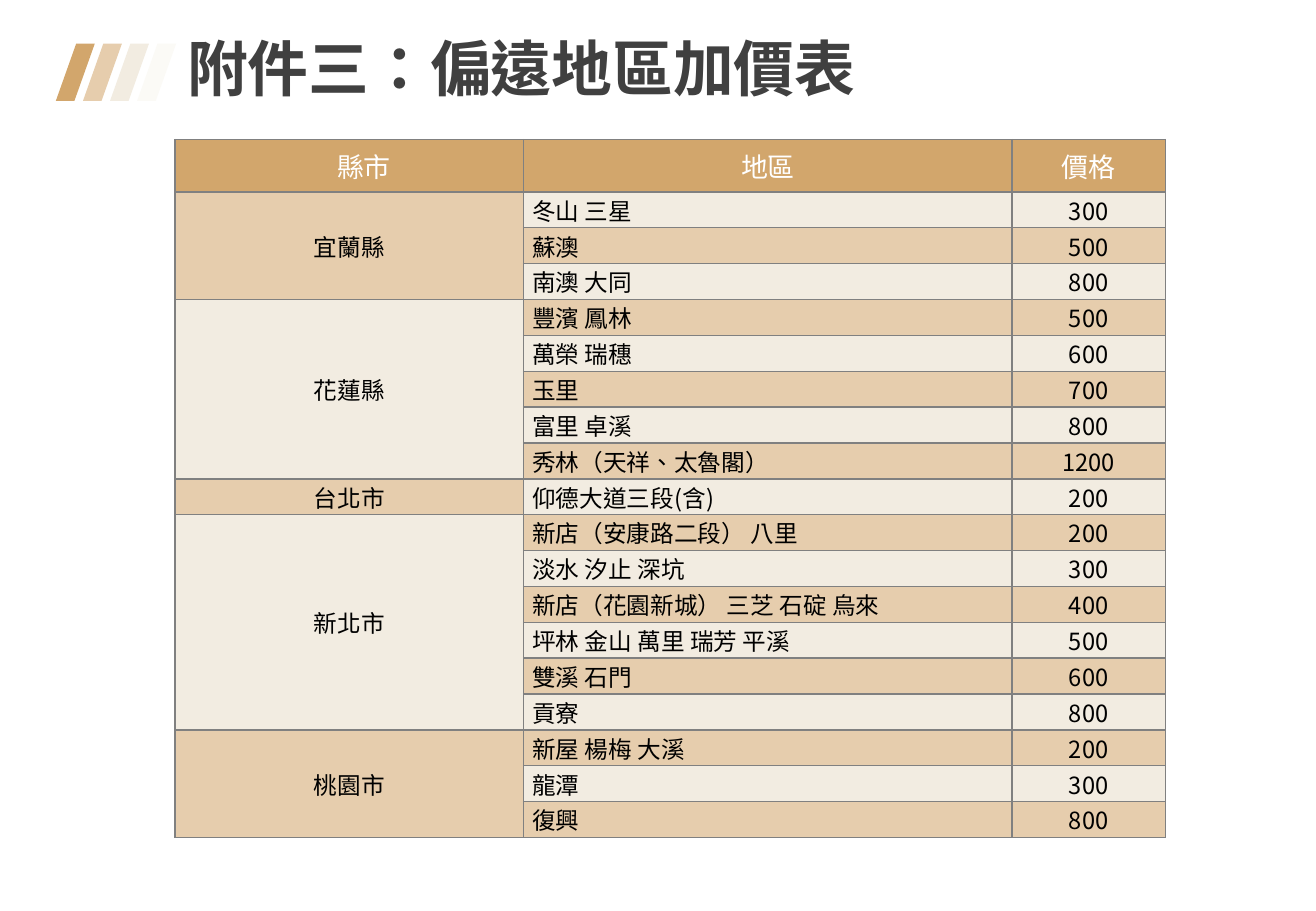
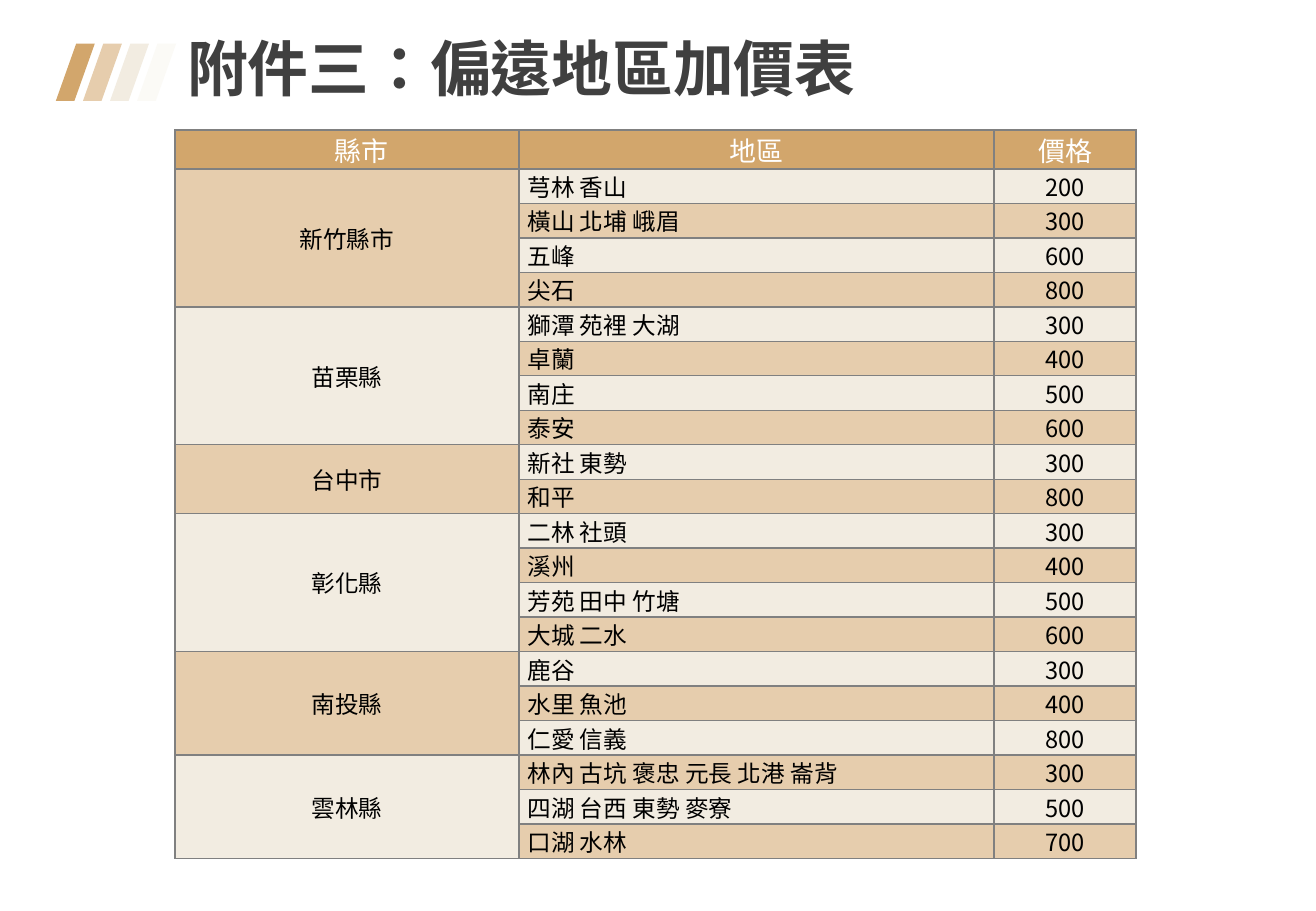
from lxml.etree import SubElement
from pptx import Presentation
from pptx.dml.color import RGBColor
from pptx.enum.shapes import MSO_SHAPE
from pptx.enum.text import MSO_ANCHOR, MSO_AUTO_SIZE, PP_ALIGN
from pptx.oxml.ns import qn
from pptx.util import Inches, Pt

COLORS = {
    "gold": "D2A66C", "tan": "E6CDAD", "cream": "F2ECE1", "ivory": "FBFAF6",
    "title": "404040", "border": "808080", "white": "FFFFFF", "black": "000000",
}
CJK = "Noto Sans CJK SC"
TITLE = "附件三：偏遠地區加價表"
TITLE_FONT = {"size": Pt(36), "name": "Roboto", "bold": True}
HEAD_FONT = {"size": Pt(16), "name": CJK}
BODY_FONT = {"size": Pt(14), "name": CJK}
HEADERS = ["縣市", "地區", "價格"]

TABLES = [
    {
        "top": 1.15, "height": 5.75, "head": 0.43, "cols": [2.87, 4.02, 1.26],
        "counties": [
            ("宜蘭縣", [("冬山 三星", 300), ("蘇澳", 500), ("南澳 大同", 800)]),
            ("花蓮縣", [("豐濱 鳳林", 500), ("萬榮 瑞穗", 600), ("玉里", 700),
                     ("富里 卓溪", 800), ("秀林（天祥、太魯閣）", 1200)]),
            ("台北市", [("仰德大道三段(含)", 200)]),
            ("新北市", [("新店（安康路二段） 八里", 200), ("淡水 汐止 深坑", 300),
                     ("新店（花園新城） 三芝 石碇 烏來", 400),
                     ("坪林 金山 萬里 瑞芳 平溪", 500), ("雙溪 石門", 600), ("貢寮", 800)]),
            ("桃園市", [("新屋 楊梅 大溪", 200), ("龍潭", 300), ("復興", 800)]),
        ],
    },
    {
        "top": 1.07, "height": 5.98, "head": 0.32, "cols": [2.83, 3.91, 1.17],
        "counties": [
            ("新竹縣市", [("芎林 香山", 200), ("橫山 北埔 峨眉", 300), ("五峰", 600), ("尖石", 800)]),
            ("苗栗縣", [("獅潭 苑裡 大湖", 300), ("卓蘭", 400), ("南庄", 500), ("泰安", 600)]),
            ("台中市", [("新社 東勢", 300), ("和平", 800)]),
            ("彰化縣", [("二林 社頭", 300), ("溪州", 400), ("芳苑 田中 竹塘", 500), ("大城 二水", 600)]),
            ("南投縣", [("鹿谷", 300), ("水里 魚池", 400), ("仁愛 信義", 800)]),
            ("雲林縣", [("林內 古坑 褒忠 元長 北港 崙背", 300), ("四湖 台西 東勢 麥寮", 500),
                     ("口湖 水林", 700)]),
        ],
    },
]


def write(p, text, font, color, align):
    p.alignment = align
    r = p.add_run()
    r.text = text
    for name, value in font.items():
        setattr(r.font, name, value)
    r.font.color.rgb = RGBColor.from_string(COLORS[color])
    rPr = r._r.get_or_add_rPr()
    rPr.set("lang", "zh-TW")
    SubElement(rPr, qn("a:ea")).set("typeface", CJK)


def fill_cell(cell, text, fill, font=BODY_FONT, color="black", align=PP_ALIGN.CENTER):
    cell.vertical_anchor = MSO_ANCHOR.MIDDLE
    cell.margin_left = cell.margin_right = Inches(0.07)
    cell.margin_top = cell.margin_bottom = 0
    tcPr = cell._tc.get_or_add_tcPr()
    for side in ("lnL", "lnR", "lnT", "lnB"):
        ln = SubElement(tcPr, qn(f"a:{side}"), w=str(Pt(1)))
        solid = SubElement(ln, qn("a:solidFill"))
        SubElement(solid, qn("a:srgbClr")).set("val", COLORS["border"])
    cell.fill.solid()
    cell.fill.fore_color.rgb = RGBColor.from_string(COLORS[fill])
    if text:
        write(cell.text_frame.paragraphs[0], text, font, color, align)


prs = Presentation()
prs.slide_width, prs.slide_height = Inches(10.83), Inches(7.5)
layout = prs.slide_layouts[5]
title = layout.placeholders[0]
title.left, title.top = Inches(1.44), Inches(0.24)
title.width, title.height = Inches(8.86), Inches(0.71)
slides = [prs.slides.add_slide(layout) for _ in TABLES]

for i, color in enumerate(["gold", "tan", "cream", "ivory"]):
    sp = slides[0].shapes.add_shape(
        MSO_SHAPE.PARALLELOGRAM, Inches(0.46 + i * 0.223), Inches(0.36), Inches(0.32), Inches(0.47))
    sp.adjustments[0] = 0.522
    sp.shadow.inherit = False
    sp.fill.solid()
    sp.fill.fore_color.rgb = RGBColor.from_string(COLORS[color])
    sp.line.fill.background()
    sp._element.nvSpPr.cNvPr.set("id", str(20 + i))
    layout.shapes._spTree.insert(2 + i, sp._element)

for s, data in zip(slides, TABLES):
    tf = s.shapes.title.text_frame
    tf.word_wrap = True
    tf.auto_size = MSO_AUTO_SIZE.NONE
    tf.vertical_anchor = MSO_ANCHOR.MIDDLE
    tf.paragraphs[0].line_spacing = 0.9
    write(tf.paragraphs[0], TITLE, TITLE_FONT, "title", PP_ALIGN.LEFT)

    count = sum(len(areas) for _, areas in data["counties"])
    table = s.shapes.add_table(
        count + 1, len(HEADERS), Inches(1.44), Inches(data["top"]),
        Inches(sum(data["cols"])), Inches(data["height"])).table
    table.first_row = table.horz_banding = False
    for column, width in zip(table.columns, data["cols"]):
        column.width = Inches(width)
    for row in table.rows:
        row.height = Inches((data["height"] - data["head"]) / count)
    table.rows[0].height = Inches(data["head"])

    for col, text in enumerate(HEADERS):
        fill_cell(table.cell(0, col), text, "gold", HEAD_FONT, "white")
    table.cell(0, 0).margin_left = Inches(0.31)

    row = 1
    for i, (county, areas) in enumerate(data["counties"]):
        first = row
        for area, price in areas:
            stripe = "cream" if row % 2 else "tan"
            fill_cell(table.cell(row, 0), county if row == first else "", "cream" if i % 2 else "tan")
            fill_cell(table.cell(row, 1), area, stripe, align=PP_ALIGN.LEFT)
            fill_cell(table.cell(row, 2), str(price), stripe)
            row += 1
        if len(areas) > 1:
            table.cell(first, 0).merge(table.cell(row - 1, 0))

prs.save("out.pptx")
